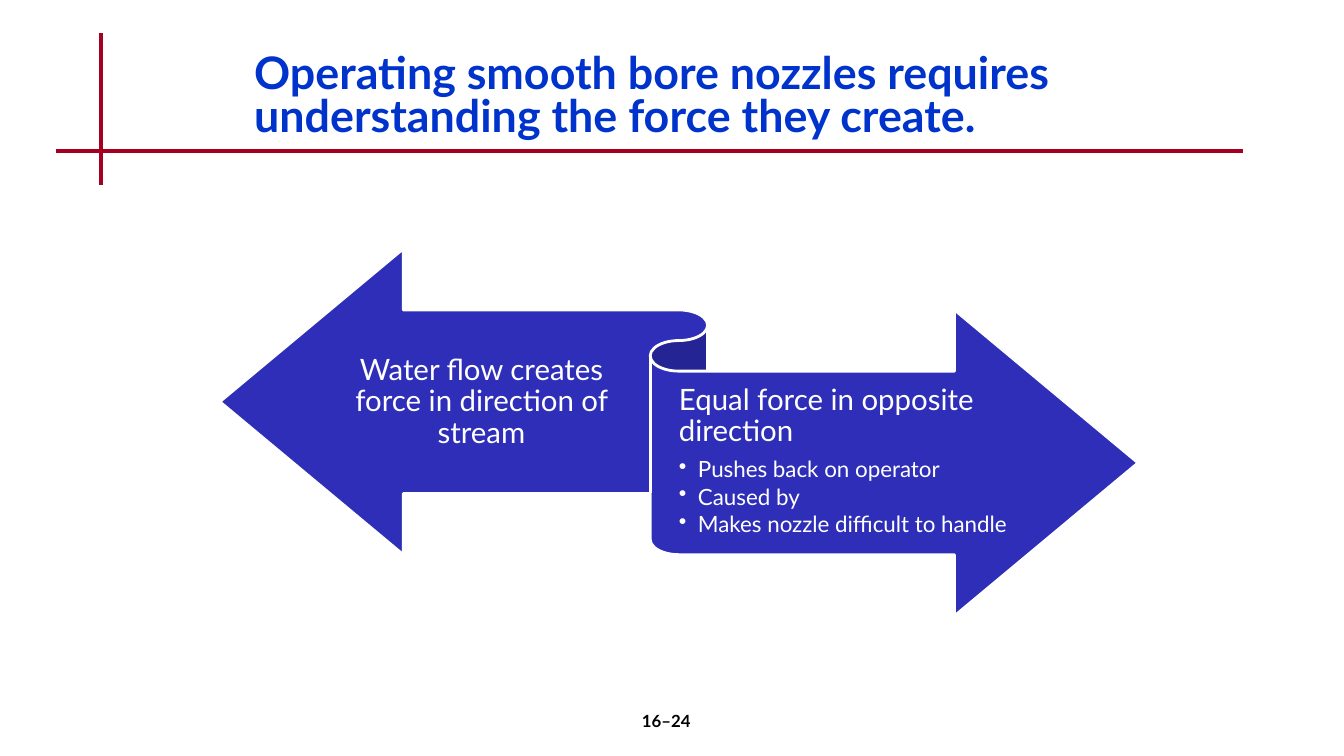
from lxml import etree
from pptx import Presentation
from pptx.dml.color import RGBColor
from pptx.enum.shapes import MSO_CONNECTOR, MSO_SHAPE
from pptx.enum.text import MSO_ANCHOR, MSO_AUTO_SIZE, PP_ALIGN
from pptx.oxml.ns import qn
from pptx.util import Cm, Pt

RED = RGBColor(0xA5, 0x00, 0x21)
TITLE_BLUE = RGBColor(0x00, 0x33, 0xCC)
RIBBON_BLUE = RGBColor(0x2E, 0x2E, 0xB9)
WHITE = RGBColor(0xFF, 0xFF, 0xFF)
BLACK = RGBColor(0x00, 0x00, 0x00)
FONT = "Lato"
STRAIGHT = MSO_CONNECTOR.STRAIGHT
RIBBON = MSO_SHAPE.LEFT_RIGHT_RIBBON
TOP, MIDDLE = MSO_ANCHOR.TOP, MSO_ANCHOR.MIDDLE
LEFT, CENTER = PP_ALIGN.LEFT, PP_ALIGN.CENTER
NO_AUTOFIT = MSO_AUTO_SIZE.NONE
TITLE_ONLY = 5
BULLET_INDENT = 0.48


def write(paragraph, text, size, color, bold=False, align=LEFT,
          spacing=1.0, after=0, bullet=False):
    paragraph.alignment = align
    paragraph.line_spacing = spacing
    paragraph.space_before = Pt(0)
    paragraph.space_after = Pt(after)
    if bullet:
        paragraph.level = 1
        properties = paragraph._p.get_or_add_pPr()
        properties.set("marL", str(Cm(BULLET_INDENT)))
        properties.set("indent", str(-Cm(BULLET_INDENT)))
        etree.SubElement(properties, qn("a:buChar"), char="•")
    run = paragraph.add_run()
    run.text = text
    run.font.name = FONT
    run.font.size = Pt(size)
    run.font.bold = bold
    run.font.color.rgb = color


def add_text_frame(slide, left, top, width, height):
    box = slide.shapes.add_textbox(Cm(left), Cm(top), Cm(width), Cm(height))
    box.text_frame.word_wrap = True
    return box.text_frame


def add_rule(slide, x1, y1, x2, y2):
    rule = slide.shapes.add_connector(STRAIGHT, Cm(x1), Cm(y1), Cm(x2), Cm(y2))
    rule.line.color.rgb = RED
    rule.line.width = Pt(3)
    etree.SubElement(rule._element.spPr, qn("a:effectLst"))


def add_header(slide, left, top, width, height):
    add_rule(slide, left + 1.12, top, left + 1.12, top + height)
    add_rule(slide, left, top + 2.97, left + width, top + 2.97)
    title = slide.shapes.title
    title.left, title.top = Cm(left + 4.73), Cm(top + 0.43)
    title.width, title.height = Cm(23.5), Cm(2.54)
    frame = title.text_frame
    frame.word_wrap = True
    frame.auto_size = NO_AUTOFIT
    frame.vertical_anchor = TOP
    write(frame.paragraphs[0],
          "Operating smooth bore nozzles requires understanding the force they create.",
          size=32, color=TITLE_BLUE, bold=True, spacing=0.8)


def add_ribbon_label(slide, left, top, width, height, heading, points=(), align=LEFT):
    frame = add_text_frame(slide, left, top, width, height)
    frame.vertical_anchor = MIDDLE
    frame.margin_left = frame.margin_right = 0
    frame.margin_top, frame.margin_bottom = Cm(0.2), Cm(0.23)
    write(frame.paragraphs[0], heading, size=21, color=WHITE,
          align=align, spacing=0.9, after=7.35)
    for point in points:
        write(frame.add_paragraph(), point, size=16, color=WHITE,
              spacing=0.9, after=2.4, bullet=True)


def add_force_ribbon(slide, left, top, width, height):
    ribbon = slide.shapes.add_shape(RIBBON, Cm(left), Cm(top), Cm(width), Cm(height))
    ribbon.shadow.inherit = False
    ribbon.fill.solid()
    ribbon.fill.fore_color.rgb = RIBBON_BLUE
    ribbon.line.color.rgb = WHITE
    ribbon.line.width = Pt(2)
    band = 0.49 * height
    add_ribbon_label(slide, left + 0.12 * width, top + 0.175 * height,
                     0.33 * width, band,
                     "Water flow creates force in direction of stream", align=CENTER)
    add_ribbon_label(slide, left + 0.5 * width, top + 0.335 * height,
                     0.39 * width, band, "Equal force in opposite direction",
                     ("Pushes back on operator", "Caused by",
                      "Makes nozzle difficult to handle"))


def add_page_number(slide, left, top, width, height):
    frame = add_text_frame(slide, left, top, width, height)
    write(frame.paragraphs[0], "16–24", size=12, color=BLACK, bold=True, align=CENTER)


def main():
    deck = Presentation()
    deck.slide_width, deck.slide_height = Cm(33.87), Cm(19.05)
    slide = deck.slides.add_slide(deck.slide_layouts[TITLE_ONLY])
    slide.background.fill.solid()
    slide.background.fill.fore_color.rgb = WHITE
    add_header(slide, 1.42, 0.84, 29.9, 3.81)
    add_page_number(slide, 13.26, 17.78, 7.06, 1.27)
    add_force_ribbon(slide, 5.54, 6.27, 23.14, 9.25)
    deck.save("out.pptx")


if __name__ == "__main__":
    main()
